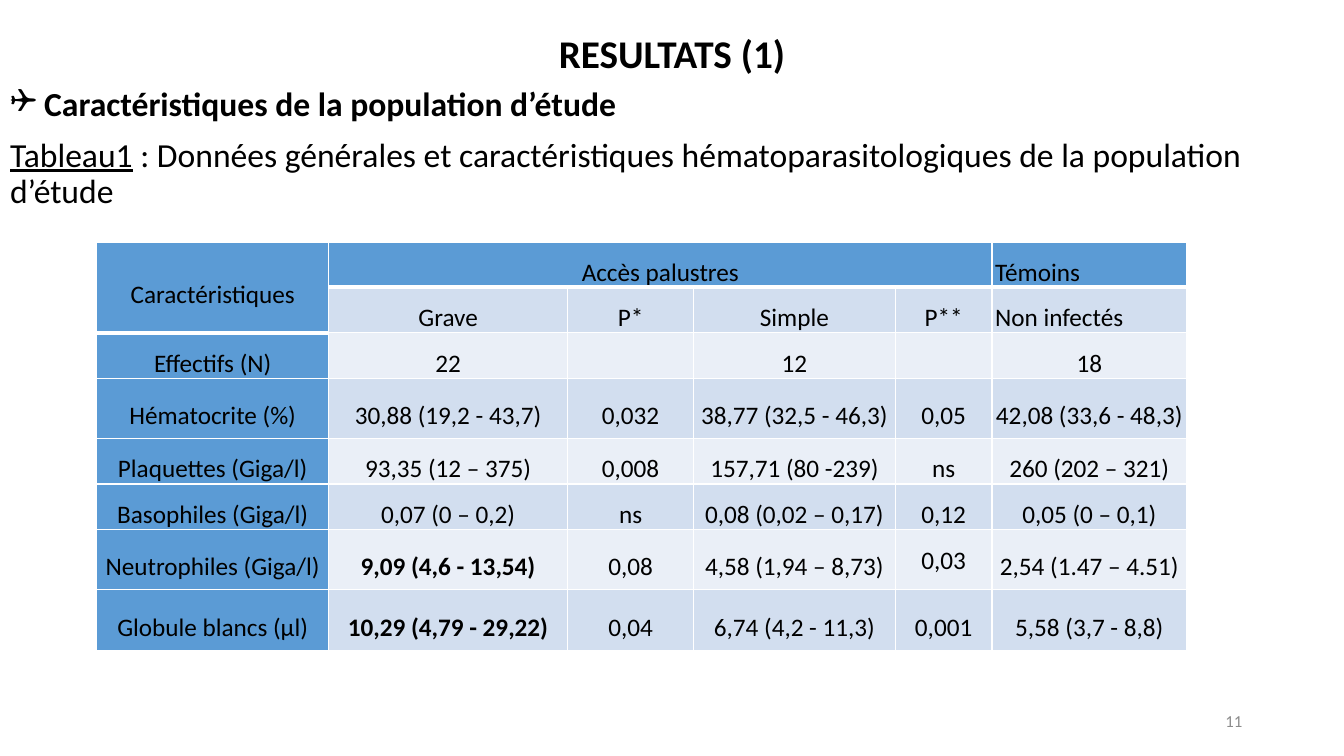
from lxml import etree
from pptx import Presentation, util as u
from pptx.dml.color import RGBColor
from pptx.enum import text
from pptx.oxml import ns

BLACK = RGBColor(0x00, 0x00, 0x00)
RED = RGBColor(0xFF, 0x00, 0x00)
GREY = RGBColor(0x8C, 0x8C, 0x8C)
WHITE = RGBColor(0xFF, 0xFF, 0xFF)
HEAD_BLUE = RGBColor(0x5B, 0x9B, 0xD5)
BAND_DARK = RGBColor(0xD2, 0xDE, 0xEF)
BAND_LIGHT = RGBColor(0xEA, 0xEF, 0xF7)

FONT = "Calibri"
WIDTH, HEIGHT = 13.33, 7.5
TITLE_HEIGHT = 0.82
COLUMNS = [2.3, 2.37, 1.25, 2, 0.96, 1.93]
ROWS = [0.4, 0.4, 0.45, 0.6, 0.45, 0.45, 0.6, 0.6]
DATA = [
    ["Caractéristiques", "Accès palustres", "", "", "", "Témoins"],
    ["", "Grave", "P*", "Simple", "P**", "Non infectés"],
    ["Effectifs (N)", "22", "", "12", "", "18"],
    ["Hématocrite (%)", "30,88 (19,2 - 43,7)", "0,032",
     "38,77 (32,5 - 46,3)", "0,05", "42,08 (33,6 - 48,3)"],
    ["Plaquettes (Giga/l)", "93,35 (12 – 375)", "0,008",
     "157,71 (80 -239)", "ns", "260 (202 – 321)"],
    ["Basophiles (Giga/l)", "0,07 (0 – 0,2)", "ns",
     "0,08 (0,02 – 0,17)", "0,12", "0,05 (0 – 0,1)"],
    ["Neutrophiles (Giga/l)", "9,09 (4,6 - 13,54)", "0,08",
     "4,58 (1,94 – 8,73)", "0,03", "2,54 (1.47 – 4.51)"],
    ["Globule blancs (µl)", "10,29 (4,79 - 29,22)", "0,04",
     "6,74 (4,2 - 11,3)", "0,001", "5,58 (3,7 - 8,8)"],
]
BOLD_CELLS = {(6, 1), (7, 1)}
TIGHT_CELL = (6, 4)


def place(shape, box):
    """Move a shape to a box given in inches."""
    shape.left, shape.top, shape.width, shape.height = map(u.Inches, box)


def style(span, size, color=BLACK, bold=False):
    """Format one run."""
    span.font.name = FONT
    span.font.size = u.Pt(size)
    span.font.bold = bold
    span.font.color.rgb = color


def set_bullet(para, indent, char=None):
    """Give a paragraph a hanging bullet, or none."""
    props = para._p.get_or_add_pPr()
    props.set("marL", str(u.Inches(indent)))
    props.set("indent", str(-u.Inches(indent)))
    if char:
        etree.SubElement(props, ns.qn("a:buFont")).set("typeface", "Wingdings")
        etree.SubElement(props, ns.qn("a:buChar")).set("char", char)
    else:
        etree.SubElement(props, ns.qn("a:buNone"))


def add_title(page, box):
    """Fill the title placeholder."""
    title = page.shapes.title
    place(title, box)
    frame = title.text_frame
    frame.text = "RESULTATS (1)"
    frame.auto_size = text.MSO_AUTO_SIZE.NONE
    frame.vertical_anchor = text.MSO_ANCHOR.MIDDLE
    para = frame.paragraphs[0]
    para.alignment = text.PP_ALIGN.CENTER
    para.line_spacing = 1.5
    style(para.runs[0], 28, bold=True)


def add_body(page, box):
    """Fill the body placeholder with the heading and the table caption."""
    body = page.placeholders[1]
    place(body, box)
    frame = body.text_frame
    frame.text = " Caractéristiques de la population d’étude"
    frame.auto_size = text.MSO_AUTO_SIZE.NONE
    heading, caption = frame.paragraphs[0], frame.add_paragraph()
    style(heading.runs[0], 24, bold=True)
    pieces = [
        ("Tableau1", BLACK),
        ("\u00a0", RED),
        (": Données générales et caractéristiques hématoparasitologiques"
         " de la population d’étude", BLACK),
    ]
    for words, color in pieces:
        span = caption.add_run()
        span.text = words
        style(span, 24, color)
    caption.runs[0].font.underline = True
    for para in (heading, caption):
        para.line_spacing = 0.9
        para.space_before = u.Pt(10)
    set_bullet(heading, 0.25, "❑")
    set_bullet(caption, 0)


def set_borders(cell, bottom):
    """Draw white lines on the four sides of a cell."""
    props = cell._tc.get_or_add_tcPr()
    for index, (side, width) in enumerate(
            [("L", 1), ("R", 1), ("T", 1), ("B", bottom)]):
        line = etree.Element(ns.qn(f"a:ln{side}"), w=str(u.Pt(width)))
        fill = etree.SubElement(line, ns.qn("a:solidFill"))
        etree.SubElement(fill, ns.qn("a:srgbClr")).set("val", str(WHITE))
        props.insert(index, line)


def fill_cell(cell, row, column):
    """Colour one cell and write its value."""
    cell.fill.solid()
    if row == 0 or column == 0:
        cell.fill.fore_color.rgb = HEAD_BLUE
    else:
        cell.fill.fore_color.rgb = BAND_DARK if row % 2 else BAND_LIGHT
    set_borders(cell, 3 if row == 0 else 1)
    if not DATA[row][column]:
        return
    cell.text_frame.text = DATA[row][column]
    cell.vertical_anchor = text.MSO_ANCHOR.MIDDLE
    cell.margin_left = cell.margin_right = u.Inches(0.03)
    cell.margin_top = cell.margin_bottom = 0
    para = cell.text_frame.paragraphs[0]
    left = row < 2 and column == len(COLUMNS) - 1
    para.alignment = text.PP_ALIGN.LEFT if left else text.PP_ALIGN.CENTER
    para.line_spacing = 1.07 if (row, column) == TIGHT_CELL else 1.5
    style(para.runs[0], 18, bold=(row, column) in BOLD_CELLS)


def add_results(page, left, top):
    """Build the results table from its top left corner."""
    box = map(u.Inches, (left, top, sum(COLUMNS), sum(ROWS)))
    table = page.shapes.add_table(len(ROWS), len(COLUMNS), *box).table
    table.first_row = table.horz_banding = False
    for column, width in zip(table.columns, COLUMNS):
        column.width = u.Inches(width)
    for row, height in zip(table.rows, ROWS):
        row.height = u.Inches(height)
    table.cell(0, 0).merge(table.cell(1, 0))
    table.cell(0, 1).merge(table.cell(0, 4))
    for row in range(len(ROWS)):
        for column in range(len(COLUMNS)):
            fill_cell(table.cell(row, column), row, column)


def add_page_number(page, box):
    """Write the page number at the lower right."""
    frame = page.shapes.add_textbox(*map(u.Inches, box)).text_frame
    frame.word_wrap = True
    frame.text = "11"
    frame.vertical_anchor = text.MSO_ANCHOR.MIDDLE
    frame.paragraphs[0].alignment = text.PP_ALIGN.RIGHT
    style(frame.paragraphs[0].runs[0], 12, GREY)


def main():
    """Build the deck and save it."""
    deck = Presentation()
    deck.slide_width, deck.slide_height = u.Inches(WIDTH), u.Inches(HEIGHT)
    page = deck.slides.add_slide(deck.slide_layouts[1])
    add_title(page, (0, 0, WIDTH, TITLE_HEIGHT))
    add_body(page, (0, TITLE_HEIGHT, WIDTH, HEIGHT - TITLE_HEIGHT))
    add_page_number(page, (9.42, 6.95, 3, 0.4))
    add_results(page, 0.96, 2.4)
    deck.save("out.pptx")


if __name__ == "__main__":
    main()
